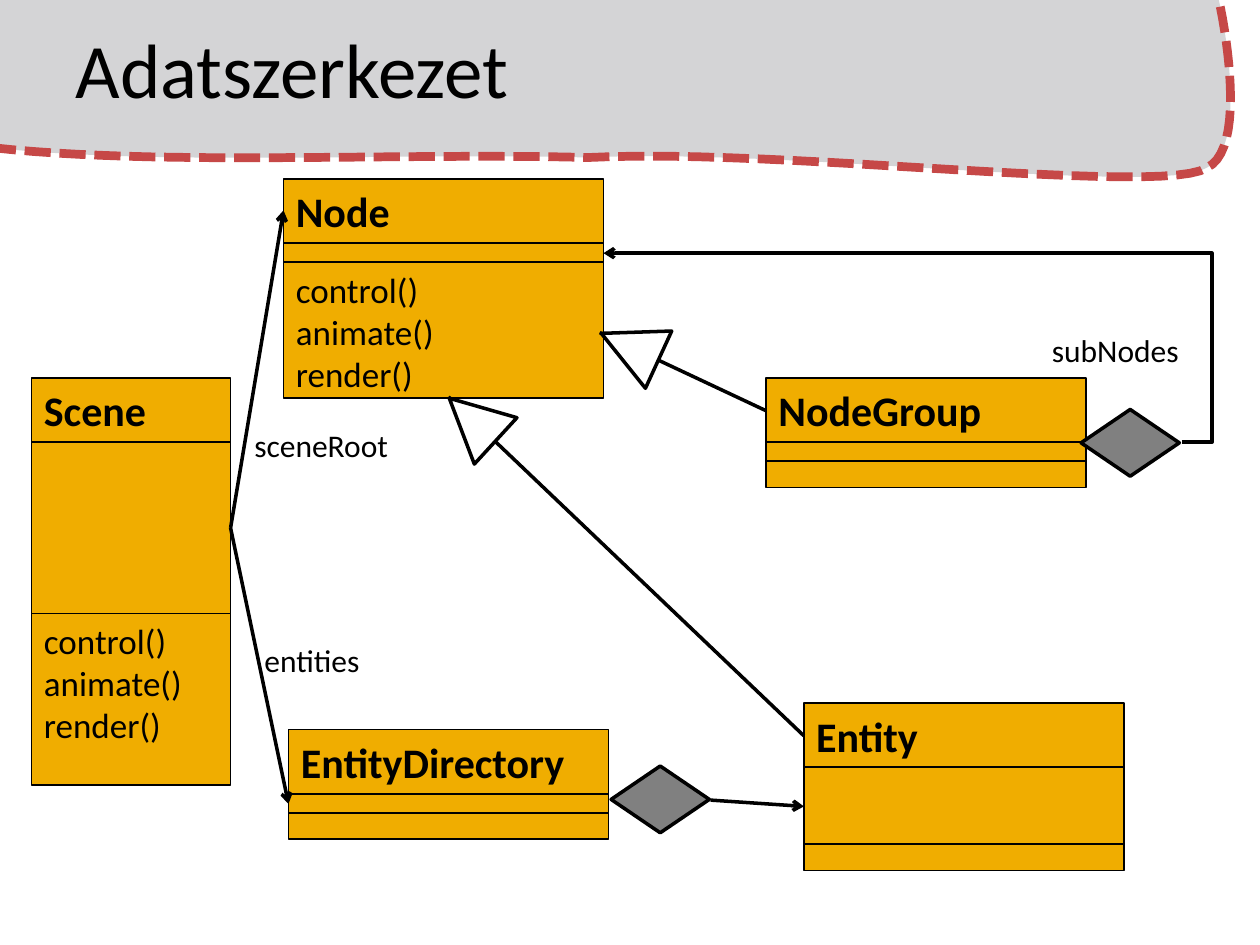
from lxml import etree
from pptx import Presentation
from pptx.dml.color import RGBColor
from pptx.enum import dml, shapes, text
from pptx.oxml import ns
from pptx.util import Inches, Pt

THEME = {
    "font": "Calibri", "black": "000000", "white": "FFFFFF", "box": "F0AD00",
    "diamond": "808080", "band": "D4D4D6", "dash": "C64847",
    "title": 44, "name": 24, "method": 20, "label": 18,
    "thin": 1, "thick": 2, "band_line": 5,
}

# Content: class boxes as name, left, top, width, attribute height, method height, methods
METHODS = ["control()", "animate()", "render()"]
HEADER = 0.51
CLASSES = [
    ("Scene", 0.25, 3, 1.58, 1.36, 1.36, METHODS),
    ("EntityDirectory", 2.29, 5.79, 2.54, 0.15, 0.21, []),
    ("Entity", 6.38, 5.58, 2.54, 0.61, 0.21, []),
    ("NodeGroup", 6.08, 3, 2.54, 0.15, 0.21, []),
    ("Node", 2.25, 1.42, 2.54, 0.15, 1.08, METHODS),
]
# Associations end in an arrow, inheritance lines end at a triangle
ASSOCIATIONS = [
    ((5.64, 6.35), (6.38, 6.4)),
    ((1.83, 4.19), (2.29, 6.38)),
    ((1.83, 4.19), (2.25, 1.67)),
]
INHERITANCE = [
    ((6.08, 3.26), (4.76, 2.64), (4.75, 2.5), 294.7),
    ((6.38, 5.84), (3.56, 3.15), (3.5, 3.08), 312.6),
]
SUBNODES_LOOP = ((9.38, 3.51), (4.79, 2.01))
LOOP_BEND = -0.052
DIAMONDS = [(4.85, 6.08), (8.58, 3.25)]
LABELS = [
    ("entities", 2, 5.04, 0.99),
    ("sceneRoot", 1.92, 3.33, 1.4),
    ("subNodes", 8.25, 2.58, 1.33),
]
# Title band: start point, then curves of two controls and an end
BAND_START = (-0.08, 1.17)
BAND_TOP = -0.33
BAND_CURVES = [
    ((1.27, 1.32), (3.13, 1.21), (4.67, 1.25)),
    ((6.18, 1.17), (9.26, 1.56), (9.58, 1.33)),
    ((9.95, 1.16), (9.67, -0.15), (9.58, BAND_TOP)),
]


def color(name):
    return RGBColor.from_string(THEME[name])


def paint(shape, fill, line="black", width="thin"):
    shape.shadow.inherit = False
    shape.fill.solid()
    shape.fill.fore_color.rgb = color(fill)
    shape.line.color.rgb = color(line)
    shape.line.width = Pt(THEME[width])


def write(shape, lines, size, bold=False, anchor=text.MSO_ANCHOR.TOP):
    frame = shape.text_frame
    frame.word_wrap = True
    frame.vertical_anchor = anchor
    for i, line in enumerate(lines):
        para = frame.paragraphs[0] if i == 0 else frame.add_paragraph()
        para.alignment = text.PP_ALIGN.LEFT
        span = para.add_run()
        span.text = line
        span.font.name = THEME["font"]
        span.font.size = Pt(THEME[size])
        span.font.bold = bold
        span.font.color.rgb = color("black")


def connect(page, start, end, kind=shapes.MSO_CONNECTOR.STRAIGHT, arrow=False):
    line = page.shapes.add_connector(kind, *map(Inches, start + end))
    line.line.color.rgb = color("black")
    line.line.width = Pt(THEME["thick"])
    if arrow:
        etree.SubElement(line.line._get_or_add_ln(), ns.qn("a:tailEnd"), type="arrow")
    etree.SubElement(line._element.spPr, ns.qn("a:effectLst"))
    return line


def curve_points(start, first, second, end, steps=24):
    for i in range(1, steps + 1):
        t = i / steps
        weights = ((1 - t) ** 3, 3 * t * (1 - t) ** 2, 3 * t * t * (1 - t), t ** 3)
        corners = (start, first, second, end)
        yield tuple(Inches(sum(w * c[axis] for w, c in zip(weights, corners)))
                    for axis in (0, 1))


def add_band(page):
    outline = page.shapes.build_freeform(*map(Inches, BAND_START))
    points, start = [], BAND_START
    for curve in BAND_CURVES:
        points += curve_points(start, *curve)
        start = curve[-1]
    points.append((Inches(BAND_START[0]), Inches(BAND_TOP)))
    outline.add_line_segments(points, close=True)
    band = outline.convert_to_shape()
    paint(band, "band", "dash", "band_line")
    band.line.dash_style = dml.MSO_LINE.SQUARE_DOT
    page.shapes._spTree.insert(2, band._element)  # behind the title


def add_class(page, name, left, top, width, attributes, operations, methods):
    group = page.shapes.add_group_shape()
    parts = [(HEADER, [name], "name"), (attributes, [], "method"),
             (operations, methods, "method")]
    for height, lines, size in parts:
        box = group.shapes.add_shape(
            shapes.MSO_SHAPE.RECTANGLE, *map(Inches, (left, top, width, height)))
        paint(box, "box")
        header = size == "name"
        write(box, lines, size, header,
              text.MSO_ANCHOR.MIDDLE if header else text.MSO_ANCHOR.TOP)
        top += height


def add_symbol(page, kind, place, size, fill, turn=0):
    symbol = page.shapes.add_shape(kind, *map(Inches, place + size))
    symbol.rotation = turn
    paint(symbol, fill, width="thick")


def main():
    deck = Presentation()
    deck.slide_width, deck.slide_height = Inches(10), Inches(7.5)
    page = deck.slides.add_slide(deck.slide_layouts[5])

    # Title on its band
    title = page.shapes.title
    title.left, title.top, title.width, title.height = map(Inches, (0.5, 0, 9, 1.25))
    write(title, ["Adatszerkezet"], "title", anchor=text.MSO_ANCHOR.MIDDLE)
    title.text_frame.paragraphs[0].line_spacing = Pt(40)
    add_band(page)

    # Classes and aggregation diamonds
    for entry in CLASSES:
        add_class(page, *entry)
    for place in DIAMONDS:
        add_symbol(page, shapes.MSO_SHAPE.DIAMOND, place, (0.78, 0.53), "diamond")

    # Relations
    for start, end in ASSOCIATIONS:
        connect(page, start, end, arrow=True)
    loop = connect(page, *SUBNODES_LOOP, shapes.MSO_CONNECTOR.ELBOW, arrow=True)
    guides = loop._element.spPr.find(ns.qn("a:prstGeom")).get_or_add_avLst()
    etree.SubElement(guides, ns.qn("a:gd"), name="adj1",
                     fmla=f"val {round(LOOP_BEND * 100000)}")
    for start, end, place, turn in INHERITANCE:
        connect(page, start, end)
        add_symbol(page, shapes.MSO_SHAPE.ISOSCELES_TRIANGLE, place, (0.5, 0.5),
                   "white", turn)

    # Relation names
    for name, left, top, width in LABELS:
        label = page.shapes.add_textbox(*map(Inches, (left, top, width, 0.4)))
        write(label, [name], "label")

    deck.save("out.pptx")


if __name__ == "__main__":
    main()
